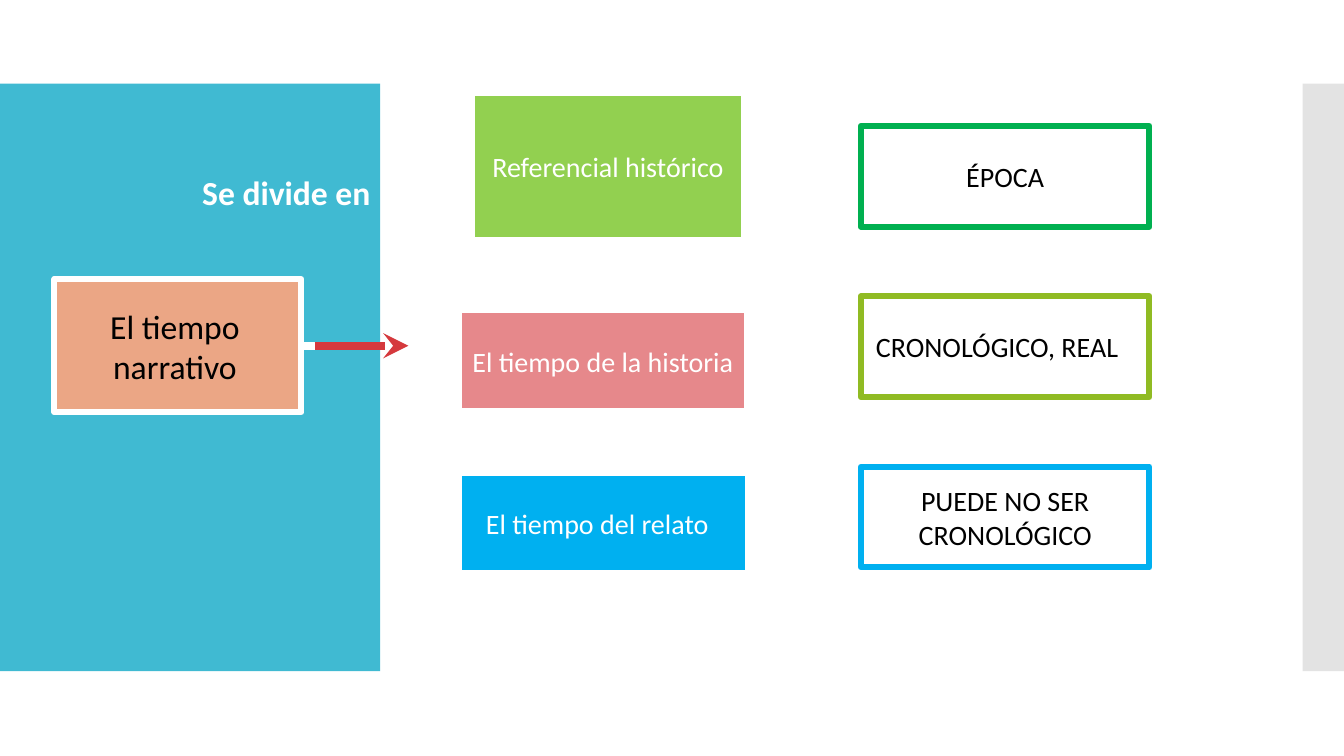
from pptx import Presentation
from pptx.dml.color import RGBColor
from pptx.enum import shapes, text
from pptx.oxml.ns import qn
from pptx.util import Inches, Pt
from lxml import etree

WHITE, BLACK = "FFFFFF", "000000"


def color(code):
    return RGBColor.from_string(code)


def write(frame, words, size, ink, bold=False, right=0.1):
    frame.word_wrap = True
    frame.margin_right = Inches(right)
    para = frame.paragraphs[0]
    para.text = words
    para.alignment = text.PP_ALIGN.CENTER
    font = para.font
    font.name, font.size, font.bold = "Calibri", Pt(size), bold
    font.color.rgb = color(ink)


def block(slide, area, fill, edge=None, width=4.33):
    shape = slide.shapes.add_shape(
        shapes.MSO_SHAPE.RECTANGLE, *map(Inches, area))
    shape.shadow.inherit = False
    shape.fill.solid()
    shape.fill.fore_color.rgb = color(fill)
    if edge:
        shape.line.color.rgb = color(edge)
        shape.line.width = Pt(width)
    else:
        shape.line.fill.background()
    return shape


def box(slide, area, words, fill, edge=WHITE, ink=WHITE, size=20,
        width=4.33, right=0.1):
    shape = block(slide, area, fill, edge, width)
    shape.text_frame.vertical_anchor = text.MSO_ANCHOR.MIDDLE
    write(shape.text_frame, words, size, ink, right=right)
    return shape


def label(slide, area, words):
    shape = slide.shapes.add_textbox(*map(Inches, area))
    write(shape.text_frame, words, 24, WHITE, bold=True)


def arrow(slide, left, right, top, ink):
    line = slide.shapes.add_connector(
        shapes.MSO_CONNECTOR.STRAIGHT,
        Inches(left), Inches(top), Inches(right), Inches(top))
    line.line.color.rgb = color(ink)
    line.line.width = Pt(6)
    etree.SubElement(line.line._get_or_add_ln(), qn("a:tailEnd"), type="stealth")
    etree.SubElement(line._element.spPr, qn("a:effectLst"))
    return line


def main():
    deck = Presentation()
    deck.slide_width, deck.slide_height = Inches(13.33), Inches(7.5)
    slide = deck.slides.add_slide(deck.slide_layouts[6])

    # Side panels, the right one half transparent
    block(slide, (0, 0.83, 3.77, 5.83), "40BAD2")
    strip = block(slide, (12.92, 0.83, 0.41, 5.83), "C8C8C8")
    tint = strip._element.spPr.find(qn("a:solidFill"))[0]
    etree.SubElement(tint, qn("a:alpha"), val="50000")

    # Main topic
    topic = box(slide, (0.54, 2.77, 2.45, 1.32), "El tiempo narrativo",
                "EBA685", ink=BLACK, size=24, right=0.16)
    label(slide, (1.8, 1.66, 2.08, 0.91), "Se divide en")

    # Kinds of time
    box(slide, (4.55, 4.69, 2.87, 1), "El tiempo del relato", "00B0F0", right=0.22)
    box(slide, (4.55, 3.08, 2.86, 1), "El tiempo de la historia", "E6888B")
    box(slide, (4.68, 0.92, 2.7, 1.46), "Referencial histórico", "92D050")

    # Red arrow over a white one
    under = arrow(slide, 2.99, 4.19, 3.43, WHITE)
    under.begin_connect(topic, 3)
    arrow(slide, 3.12, 4.05, 3.43, "D5393D")

    # Meaning of each kind
    notes = [("ÉPOCA", "00B050", 4.5, 0.1),
             ("CRONOLÓGICO, REAL", "90BB23", 4.5, 0.26),
             ("PUEDE NO SER CRONOLÓGICO", "00B0F0", 4.33, 0.1)]
    for row, (words, edge, width, right) in enumerate(notes):
        box(slide, (8.54, 1.25 + 1.69 * row, 2.86, 1), words, WHITE, edge,
            BLACK, width=width, right=right)

    deck.save("out.pptx")


if __name__ == "__main__":
    main()
